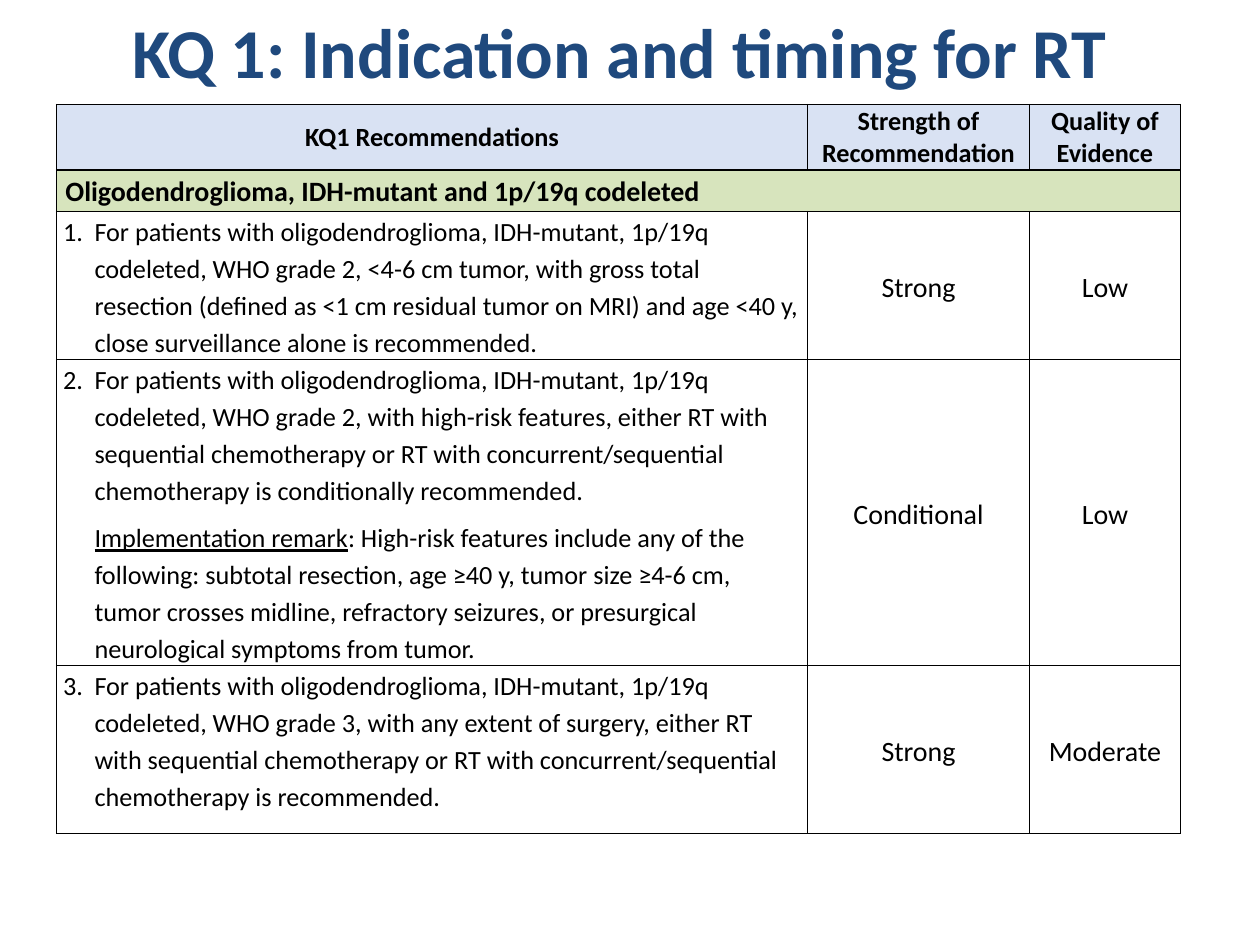
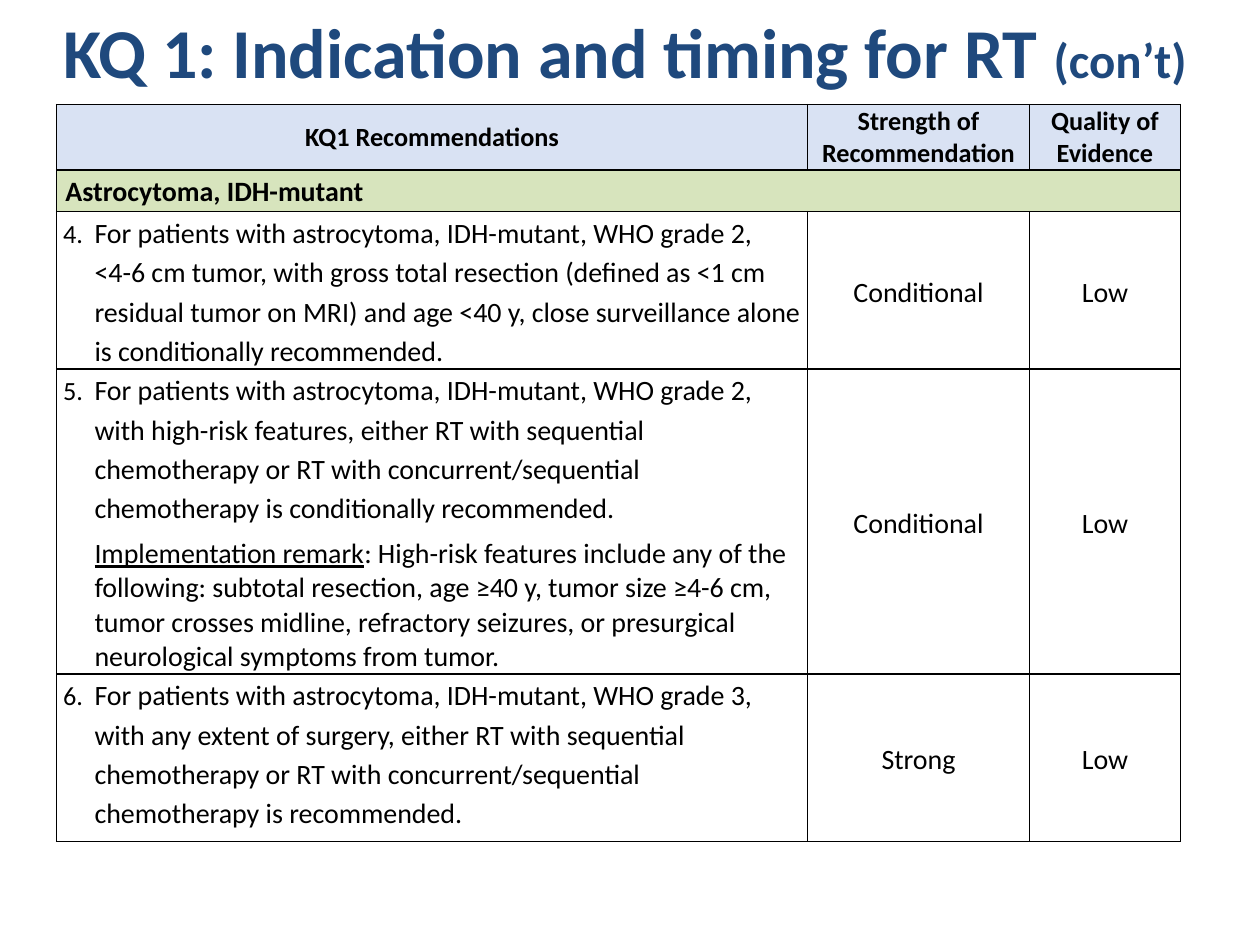
import dataclasses

import lxml.etree
import pptx
import pptx.dml.color
import pptx.enum.text
import pptx.oxml.ns
import pptx.util

Inches = pptx.util.Inches
Pt = pptx.util.Pt
Align = pptx.enum.text.PP_ALIGN
Anchor = pptx.enum.text.MSO_ANCHOR


@dataclasses.dataclass(frozen=True)
class Theme:
    face: str = "Calibri"
    navy: str = "1F497D"
    black: str = "000000"
    blue: str = "D9E2F3"
    green: str = "D7E4BD"
    title: int = 40
    aside: int = 28
    head: int = 15
    body: int = 16
    small: int = 15
    lead: float = 1.15
    rule: int = 1
    hang: float = 0.25


THEME = Theme()
GRID = (0.45, 0.83, 8.92, 5.77)
WIDTHS = (5.96, 1.76, 1.2)
HEIGHTS = (0.52, 0.33, 1.17, 2.42, 1.33)
HEADS = (
    ("KQ1 Recommendations",),
    ("Strength of", "Recommendation"),
    ("Quality of", "Evidence"),
)
REMARK = (
    ("Implementation remark", {"under": True}),
    ": High-risk features include any of the following: subtotal resection, "
    "age ≥40 y, tumor size ≥4-6 cm, tumor crosses midline, refractory seizures, "
    "or presurgical neurological symptoms from tumor.",
)


def color(code):
    return pptx.dml.color.RGBColor.from_string(code)


def child(parent, tag, **attrs):
    return lxml.etree.SubElement(parent, pptx.oxml.ns.qn(tag), **attrs)


def write(frame, *runs, size=THEME.body, ink=THEME.black, bold=False,
          align=Align.LEFT, lead=1.0, after=0, indent=0, number=None):
    para = frame.paragraphs[0]
    if para.runs:
        para = frame.add_paragraph()
    para.alignment = align
    para.line_spacing = lead
    para.space_before = Pt(0)
    para.space_after = Pt(after)
    props = para._p.get_or_add_pPr()
    props.set("marL", str(Inches(indent)))
    props.set("indent", str(Inches(-indent if number else 0)))
    if number:
        child(props, "a:buSzPct", val=str(round(100000 * THEME.small / size)))
        child(props, "a:buFont", typeface=THEME.face)
        child(props, "a:buAutoNum", type="arabicPeriod", startAt=str(number))
    else:
        child(props, "a:buNone")
    for item in runs:
        text, extra = (item, {}) if isinstance(item, str) else item
        run = para.add_run()
        run.text = text
        run.font.name = THEME.face
        run.font.size = Pt(extra.get("size", size))
        run.font.bold = bold
        run.font.underline = extra.get("under", False)
        run.font.color.rgb = color(ink)


def frame_cell(cell, fill=None, inset=0.05, anchor=Anchor.MIDDLE):
    cell.margin_left = cell.margin_right = Inches(inset)
    cell.margin_top = cell.margin_bottom = 0
    cell.vertical_anchor = anchor
    props = cell._tc.get_or_add_tcPr()
    for side in ("L", "R", "T", "B"):
        line = child(props, "a:ln" + side, w=str(Pt(THEME.rule)))
        child(child(line, "a:solidFill"), "a:srgbClr", val=THEME.black)
    if fill:
        cell.fill.solid()
        cell.fill.fore_color.rgb = color(fill)
    else:
        cell.fill.background()
    return cell.text_frame


def add_title(slide, box, *runs):
    title = slide.shapes.title
    title.left, title.top, title.width, title.height = map(Inches, box)
    frame = title.text_frame
    frame.word_wrap = True
    frame.auto_size = pptx.enum.text.MSO_AUTO_SIZE.NONE
    frame.vertical_anchor = Anchor.TOP
    write(frame, *runs, size=THEME.title, ink=THEME.navy, bold=True,
          align=Align.CENTER)


def add_heads(table):
    for col, lines in enumerate(HEADS):
        frame = frame_cell(table.cell(0, col), THEME.blue, 0.07)
        for line in lines:
            write(frame, line, size=THEME.head, bold=True, align=Align.CENTER)


def add_group(table, name):
    table.cell(1, 0).merge(table.cell(1, 2))
    for col in range(len(WIDTHS)):
        frame = frame_cell(table.cell(1, col), THEME.green, 0.07, Anchor.TOP)
        if col == 0:
            write(frame, name, bold=True, lead=THEME.lead)


def add_advice(table, row, number, advice, size, tight):
    lines, remark, *grades = advice
    frame = frame_cell(table.cell(row, 0), anchor=Anchor.TOP)
    for place, line in enumerate(lines):
        write(frame, line, size=size, lead=THEME.lead, indent=THEME.hang,
              after=6 if remark else 0, number=None if place else number)
    if remark:
        write(frame, *REMARK, size=size, indent=THEME.hang,
              lead=1.0 if tight else THEME.lead)
    for col, grade in enumerate(grades, 1):
        write(frame_cell(table.cell(row, col)), grade, align=Align.CENTER,
              lead=THEME.lead)


def add_grid(slide, box, group, first, advices, size, tight):
    table = slide.shapes.add_table(len(HEIGHTS), len(WIDTHS),
                                   *map(Inches, box)).table
    table.first_row = table.horz_banding = False
    for col, width in zip(table.columns, WIDTHS):
        col.width = Inches(width)
    for row, height in zip(table.rows, HEIGHTS):
        row.height = Inches(height)
    add_heads(table)
    add_group(table, group)
    for place, advice in enumerate(advices):
        add_advice(table, place + 2, first + place, advice, size, tight)


def add_page(deck, box, title, group, first, advices, size, tight=False):
    slide = deck.slides.add_slide(deck.slide_layouts[5])
    add_title(slide, box, *title)
    add_grid(slide, GRID, group, first, advices, size, tight)


OLIGO = (
    (("For patients with oligodendroglioma, IDH-mutant, 1p/19q codeleted, "
      "WHO grade 2, <4-6 cm tumor, with gross total resection (defined as "
      "<1 cm residual tumor on MRI) and age <40 y, close surveillance alone "
      "is recommended.",), False, "Strong", "Low"),
    (("For patients with oligodendroglioma, IDH-mutant, 1p/19q codeleted, "
      "WHO grade 2, with high-risk features, either RT with sequential "
      "chemotherapy or RT with concurrent/sequential chemotherapy is "
      "conditionally recommended.",), True, "Conditional", "Low"),
    (("For patients with oligodendroglioma, IDH-mutant, 1p/19q codeleted, "
      "WHO grade 3, with any extent of surgery, either RT with sequential "
      "chemotherapy or RT with concurrent/sequential chemotherapy is "
      "recommended.",), False, "Strong", "Moderate"),
)
ASTRO = (
    (("For patients with astrocytoma, IDH-mutant, WHO grade 2,",
      "<4-6 cm tumor, with gross total resection (defined as <1 cm residual "
      "tumor on MRI) and age <40 y, close surveillance alone is "
      "conditionally recommended."), False, "Conditional", "Low"),
    (("For patients with astrocytoma, IDH-mutant, WHO grade 2, with "
      "high-risk features, either RT with sequential chemotherapy or RT with "
      "concurrent/sequential chemotherapy is conditionally recommended.",),
     True, "Conditional", "Low"),
    (("For patients with astrocytoma, IDH-mutant, WHO grade 3, with any "
      "extent of surgery, either RT with sequential chemotherapy or RT with "
      "concurrent/sequential chemotherapy is recommended.",),
     False, "Strong", "Low"),
)


def main():
    deck = pptx.Presentation()
    deck.slide_width, deck.slide_height = Inches(10), Inches(7.5)
    topic = "KQ 1: Indication and timing for RT"
    add_page(deck, (0.33, 0.02, 9.17, 1.25), (topic,),
             "Oligodendroglioma, IDH-mutant and 1p/19q codeleted",
             1, OLIGO, THEME.small)
    add_page(deck, (0, 0.02, 9.92, 1.25),
             (topic + " ", ("(con’t)", {"size": THEME.aside})),
             "Astrocytoma, IDH-mutant", 4, ASTRO, THEME.body, tight=True)
    deck.save("out.pptx")


if __name__ == "__main__":
    main()
